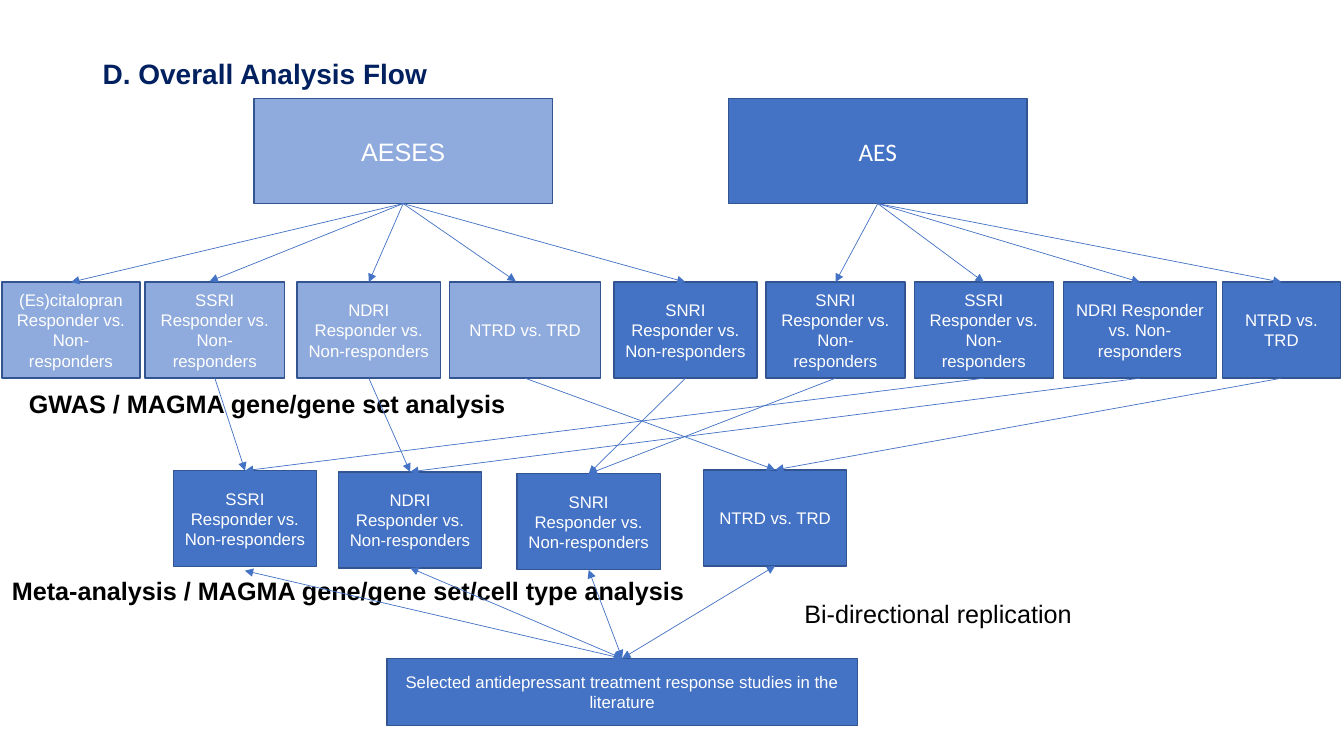
"""Build the slide that shows the overall analysis flow."""
import pptx
import pptx.dml.color
import pptx.enum.shapes
import pptx.enum.text
import pptx.util
import lxml.etree
import pptx.oxml.ns

Cm = pptx.util.Cm
Pt = pptx.util.Pt
RGBColor = pptx.dml.color.RGBColor

NAVY = RGBColor(0x00, 0x20, 0x60)
BLUE = RGBColor(0x44, 0x72, 0xC4)
PALE = RGBColor(0x8F, 0xAA, 0xDC)
EDGE = RGBColor(0x32, 0x54, 0x91)
WHITE = RGBColor(0xFF, 0xFF, 0xFF)
BLACK = RGBColor(0x00, 0x00, 0x00)

TRIAL = " Responder vs. Non-responders"
TRD = "NTRD vs. TRD"
ROW_TOP = 7.11
BOX_HIGH = 2.42
META_WIDE = 3.61

ROW = [
    ("(Es)citalopran" + TRIAL, 0.05, 3.48, PALE),
    ("SSRI" + TRIAL, 3.66, 3.51, PALE),
    ("NDRI" + TRIAL, 7.49, 3.61, PALE),
    (TRD, 11.33, 3.81, PALE),
    ("SNRI" + TRIAL, 15.47, 3.61, BLUE),
    ("SNRI\n" + TRIAL.strip(), 19.3, 3.51, BLUE),
    ("SSRI" + TRIAL, 23.04, 3.51, BLUE),
    ("NDRI" + TRIAL, 26.8, 3.86, BLUE),
    (TRD, 30.81, 2.97, BLUE),
]
META = [
    ("SSRI" + TRIAL, 4.37, 11.86),
    ("NDRI" + TRIAL, 8.53, 11.89),
    ("SNRI" + TRIAL, 13.03, 11.94),
    (TRD, 17.73, 11.84),
]
LABELS = [
    ("GWAS / MAGMA gene/gene set analysis", 0.48, 9.65, 14.2, True),
    ("Meta-analysis / MAGMA gene/gene set/cell type analysis",
     0.05, 14.38, 19.99, True),
    ("Bi-directional replication", 20.02, 14.96, 9.96, False),
]
MERGES = [(1, 0), (6, 0), (2, 1), (7, 1), (3, 3), (8, 3), (4, 2), (5, 2)]


def style(frame, size, color, bold=False, face="Arial", align=None):
    """Format every paragraph and run of a text frame."""
    for para in frame.paragraphs:
        para.alignment = align
        for run in para.runs:
            run.font.name = face
            run.font.size = Pt(size)
            run.font.bold = bold
            run.font.color.rgb = color


def add_title(slide, text):
    """Place and format the title."""
    title = slide.shapes.title
    title.left, title.top = Cm(2.33), Cm(0.05)
    title.width, title.height = Cm(29.21), Cm(3.68)
    frame = title.text_frame
    frame.text = text
    frame.auto_size = pptx.enum.text.MSO_AUTO_SIZE.NONE
    frame.vertical_anchor = pptx.enum.text.MSO_ANCHOR.MIDDLE
    frame.paragraphs[0].line_spacing = 0.9
    style(frame, 20, NAVY, True, align=pptx.enum.text.PP_ALIGN.LEFT)


def add_box(slide, text, left, top, wide, high, fill=BLUE, size=12,
            face="Arial"):
    """Add a filled box with centred white text."""
    box = slide.shapes.add_shape(
        pptx.enum.shapes.MSO_SHAPE.RECTANGLE,
        Cm(left), Cm(top), Cm(wide), Cm(high))
    box.shadow.inherit = False
    box.fill.solid()
    box.fill.fore_color.rgb = fill
    box.line.color.rgb = EDGE
    box.line.width = Pt(1)
    frame = box.text_frame
    frame.text = text
    frame.word_wrap = True
    frame.vertical_anchor = pptx.enum.text.MSO_ANCHOR.MIDDLE
    style(frame, size, WHITE, face=face,
          align=pptx.enum.text.PP_ALIGN.CENTER)
    return box


def add_label(slide, text, left, top, wide, bold):
    """Add a text box that names a step."""
    label = slide.shapes.add_textbox(Cm(left), Cm(top), Cm(wide), Cm(1.03))
    frame = label.text_frame
    frame.text = text
    frame.word_wrap = True
    frame.auto_size = pptx.enum.text.MSO_AUTO_SIZE.SHAPE_TO_FIT_TEXT
    style(frame, 18, BLACK, bold)


def add_link(slide, upper, lower, root=None, tip=None, both=False):
    """Draw an arrow from box to box, or to a free root or tip point."""
    start = root or (0, 0)
    end = tip or (0, 0)
    link = slide.shapes.add_connector(
        pptx.enum.shapes.MSO_CONNECTOR.STRAIGHT,
        Cm(start[0]), Cm(start[1]), Cm(end[0]), Cm(end[1]))
    if not root:
        link.begin_connect(upper, 2)
    if not tip:
        link.end_connect(lower, 0)
    link.line.color.rgb = BLUE
    link.line.width = Pt(0.5)
    line = link.line._get_or_add_ln()
    for tag in ["a:headEnd", "a:tailEnd"] if both else ["a:tailEnd"]:
        mark = lxml.etree.SubElement(line, pptx.oxml.ns.qn(tag))
        mark.set("type", "triangle")
    lxml.etree.SubElement(
        link._element.spPr, pptx.oxml.ns.qn("a:effectLst"))


def main():
    """Build and save the slide."""
    deck = pptx.Presentation()
    deck.slide_width, deck.slide_height = Cm(33.87), Cm(19.05)
    slide = deck.slides.add_slide(deck.slide_layouts[5])
    add_title(slide, "D. Overall Analysis Flow")

    aeses = add_box(slide, "AESES", 6.4, 2.49, 7.52, 2.64, PALE, 18)
    aes = add_box(slide, "AES", 18.36, 2.49, 7.52, 2.64, BLUE, 18, "Calibri")
    row = [add_box(slide, text, left, ROW_TOP, wide, BOX_HIGH, fill)
           for text, left, wide, fill in ROW]
    meta = [add_box(slide, text, left, top, META_WIDE, BOX_HIGH)
            for text, left, top in META]
    books = add_box(
        slide,
        "Selected antidepressant treatment response studies in the literature",
        9.75, 16.59, 11.86, 1.7)
    for label in LABELS:
        add_label(slide, *label)

    tips = {1: (5.28, 7.09), 3: (13.0, 7.09)}
    for spot, box in enumerate(row):
        add_link(slide, aeses if spot < 5 else aes, box, tip=tips.get(spot))
    for upper, lower in MERGES:
        add_link(slide, row[upper], meta[lower])
    roots = {0: (6.17, 14.38)}
    for spot, box in enumerate(meta):
        add_link(slide, box, books, root=roots.get(spot), both=True)

    deck.save("out.pptx")


if __name__ == "__main__":
    main()
